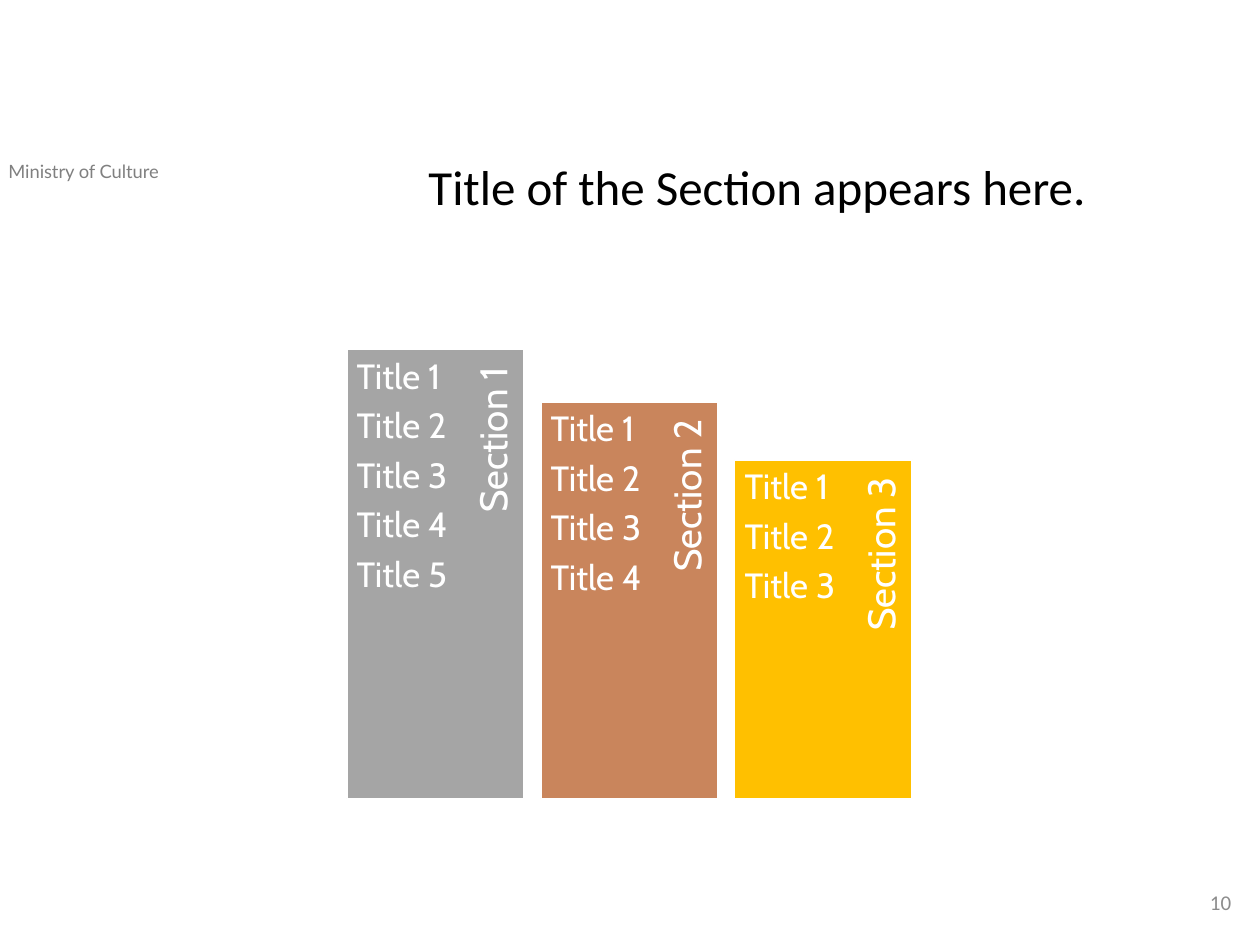
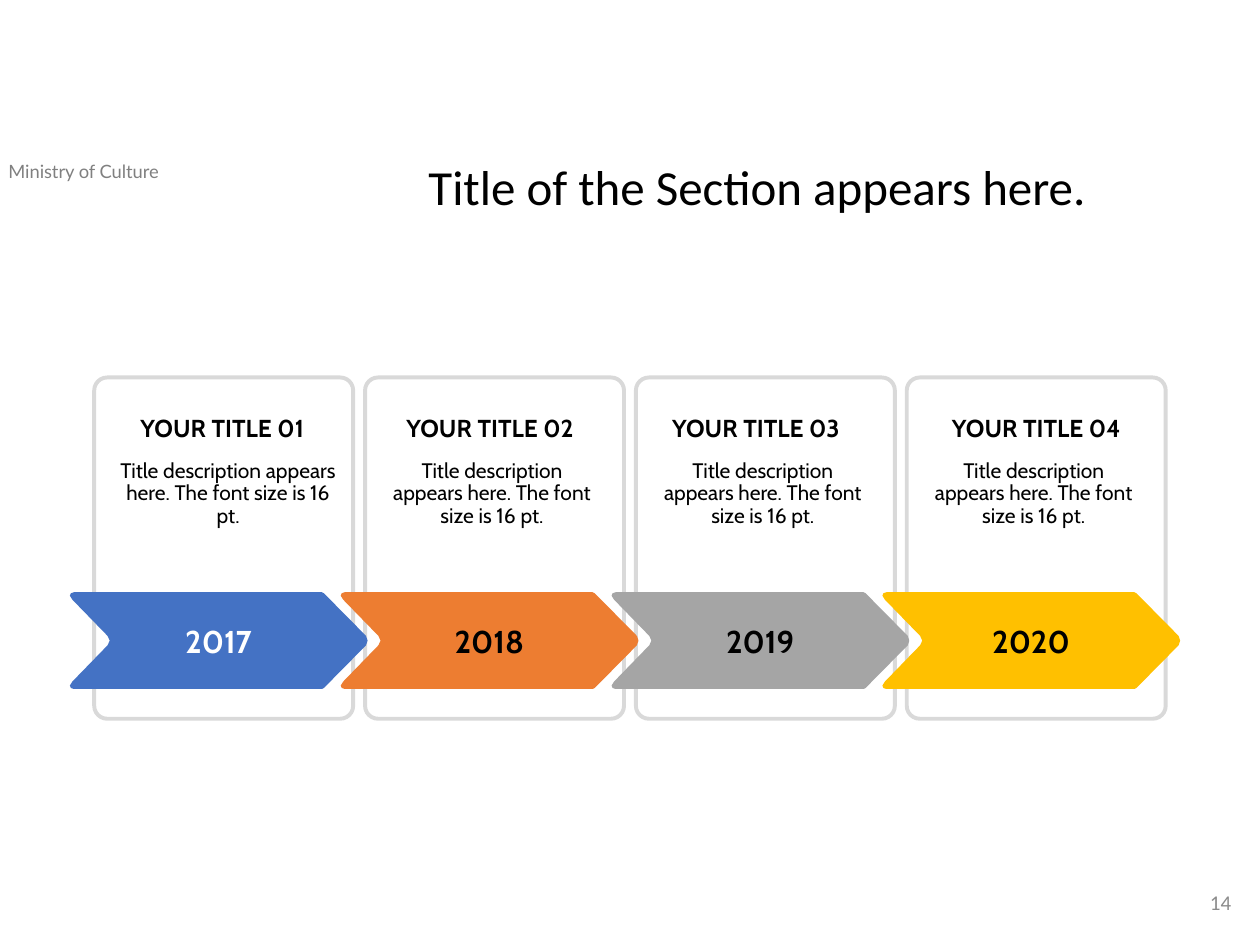
import pptx
import pptx.util
import pptx.dml.color
import pptx.enum.shapes
import pptx.enum.text

Cm = pptx.util.Cm
Pt = pptx.util.Pt
RGB = pptx.dml.color.RGBColor
SHAPE = pptx.enum.shapes.MSO_SHAPE
ALIGN = pptx.enum.text.PP_ALIGN
ANCHOR = pptx.enum.text.MSO_ANCHOR

# Shared colours and fonts
WHITE = RGB(0xFF, 0xFF, 0xFF)
BLACK = RGB(0x00, 0x00, 0x00)
FOOTER_GRAY = RGB(0x80, 0x80, 0x80)
NUMBER_GRAY = RGB(0x8C, 0x8C, 0x8C)
CARD_GRAY = RGB(0xD9, 0xD9, 0xD9)
BLUE = RGB(0x44, 0x72, 0xC4)
ORANGE = RGB(0xED, 0x7D, 0x31)
GRAY = RGB(0xA5, 0xA5, 0xA5)
GOLD = RGB(0xFF, 0xC0, 0x00)
COPPER = RGB(0xC9, 0x85, 0x5C)
BODY_FONT = "Cabin"
INSETS = (0.25, 0.13, 0.25, 0.13)

# Section bars (cm): left, top, colour, number of titles
BAR_LEFT, BAR_PITCH, BAR_WIDTH, BAR_BOTTOM = 6.99, 3.91, 3.58, 16.1
BARS = [(7.04, GRAY, 5), (8.1, COPPER, 4), (9.27, GOLD, 3)]

# Timeline steps (cm): year, arrow colour, year colour,
# title centre, description centre, description width
STEP_PITCH = 5.46
STEPS = [
    ("2017", BLUE, WHITE, 4.48, 4.6, 4.72),
    ("2018", ORANGE, BLACK, 9.88, 9.92, 4.5),
    ("2019", GRAY, BLACK, 15.24, 15.38, 4.5),
    ("2020", GOLD, BLACK, 20.89, 20.84, 4.5),
]

# Upper half of an arrow with softened corners; the lower half mirrors it
ARROW_HEIGHT = 1.95
ARROW_TOP_EDGE = [
    (0.8, 0.97), (0.76, 0.88), (0.05, 0.15), (0, 0.07), (0.02, 0.02), (0.08, 0),
    (5.08, 0), (5.12, 0.02), (5.97, 0.88), (6, 0.97),
]


def add_text(s, box, lines, size, color, font=BODY_FONT, bold=False,
             align=ALIGN.LEFT, anchor=ANCHOR.TOP, insets=INSETS,
             spacing=None, after=0):
    """Add a text box with one paragraph for each line; box is in cm."""
    sp = s.shapes.add_textbox(*map(Cm, box))
    tf = sp.text_frame
    tf.word_wrap = True
    tf.vertical_anchor = anchor
    tf.margin_left, tf.margin_top, tf.margin_right, tf.margin_bottom = map(Cm, insets)
    for i, line in enumerate(lines):
        p = tf.add_paragraph() if i else tf.paragraphs[0]
        p.alignment = align
        p.space_after = Pt(after)
        if spacing:
            p.line_spacing = spacing
        r = p.add_run()
        r.text = line
        r.font.name, r.font.size, r.font.bold = font, Pt(size), bold
        r.font.color.rgb = color
    return sp


def fill_shape(sp, color):
    sp.shadow.inherit = False
    sp.fill.solid()
    sp.fill.fore_color.rgb = color


def add_slide(prs, number):
    """Add a slide with the shared header, title and page number."""
    s = prs.slides.add_slide(prs.slide_layouts[6])
    add_text(s, (-0.08, 3.1, 5.54, 0.71), ["Ministry of Culture"], 10.5,
             FOOTER_GRAY, font="Lato")
    add_text(s, (6.96, 3.15, 16.6, 2), ["Title of the Section appears here."], 28,
             BLACK, font="Calibri", align=ALIGN.CENTER, spacing=0.9)
    add_text(s, (19.35, 17.68, 5.72, 1.02), [number], 12, NUMBER_GRAY,
             font="Calibri", align=ALIGN.RIGHT, anchor=ANCHOR.MIDDLE)
    return s


def add_section_bar(s, index, top, color, titles):
    left = BAR_LEFT + index * BAR_PITCH
    height = BAR_BOTTOM - top
    sp = s.shapes.add_shape(SHAPE.RECTANGLE, Cm(left), Cm(top), Cm(BAR_WIDTH), Cm(height))
    fill_shape(sp, color)
    sp.line.color.rgb = WHITE
    sp.line.width = Pt(1)

    # Section name, turned to read upwards and ending at the top of the bar
    length, thickness = 0.9 * height, 0.94
    center_x, center_y = left + 3.03, top + length / 2
    label = add_text(s, (center_x - length / 2, center_y - thickness / 2, length, thickness),
                     [f"Section {index + 1}"], 22, WHITE, align=ALIGN.RIGHT,
                     anchor=ANCHOR.MIDDLE, insets=(0.23, 0, 0.36, 0.08), spacing=0.9)
    label.rotation = 270

    add_text(s, (left, top, 2.54, height), [f"Title {n + 1}" for n in range(titles)],
             20, WHITE, insets=(0.2,) * 4, spacing=0.9, after=6.7)


def add_card(s, left):
    sp = s.shapes.add_shape(SHAPE.ROUNDED_RECTANGLE, Cm(left), Cm(7.61), Cm(5.22), Cm(6.88))
    sp.adjustments[0] = 0.05
    sp.shadow.inherit = False
    sp.fill.background()
    sp.line.color.rgb = CARD_GRAY
    sp.line.width = Pt(2.25)


def add_arrow(s, left, color):
    bottom_edge = [(x, ARROW_HEIGHT - y) for x, y in reversed(ARROW_TOP_EDGE)]
    points = [(Cm(x), Cm(y)) for x, y in ARROW_TOP_EDGE + bottom_edge]
    fb = s.shapes.build_freeform(*points[0])
    fb.add_line_segments(points[1:], close=True)
    sp = fb.convert_to_shape(Cm(left), Cm(11.94))
    fill_shape(sp, color)
    sp.line.fill.background()


def add_step_text(s, index, year, year_color, title_x, text_x, text_width):
    add_text(s, (3.35 + index * STEP_PITCH, 12.4, 2.11, 1.02), [year], 18, year_color,
             bold=True, align=ALIGN.CENTER, anchor=ANCHOR.MIDDLE)
    add_text(s, (text_x - text_width / 2, 9.22, text_width, 1.47),
             ["Title description appears here. The font size is 16 pt."], 12, BLACK,
             align=ALIGN.CENTER, insets=(0.1, 0.05, 0.1, 0.05), spacing=0.9)
    add_text(s, (title_x - 2.4, 8.18, 4.8, 0.86), [f"YOUR TITLE {index + 1:02}"], 14,
             BLACK, bold=True, align=ALIGN.CENTER, anchor=ANCHOR.BOTTOM)


def main():
    prs = pptx.Presentation()
    prs.slide_width, prs.slide_height = Cm(25.4), Cm(19.05)

    # Section bars
    s = add_slide(prs, "10")
    for i, bar in enumerate(BARS):
        add_section_bar(s, i, *bar)

    # Timeline: all cards lie behind the arrows
    s = add_slide(prs, "14")
    for i in range(len(STEPS)):
        add_card(s, 1.9 + i * STEP_PITCH)
    for i, (year, color, *text) in enumerate(STEPS):
        add_arrow(s, 1.41 + i * STEP_PITCH, color)
        add_step_text(s, i, year, *text)

    prs.save("out.pptx")


if __name__ == "__main__":
    main()
